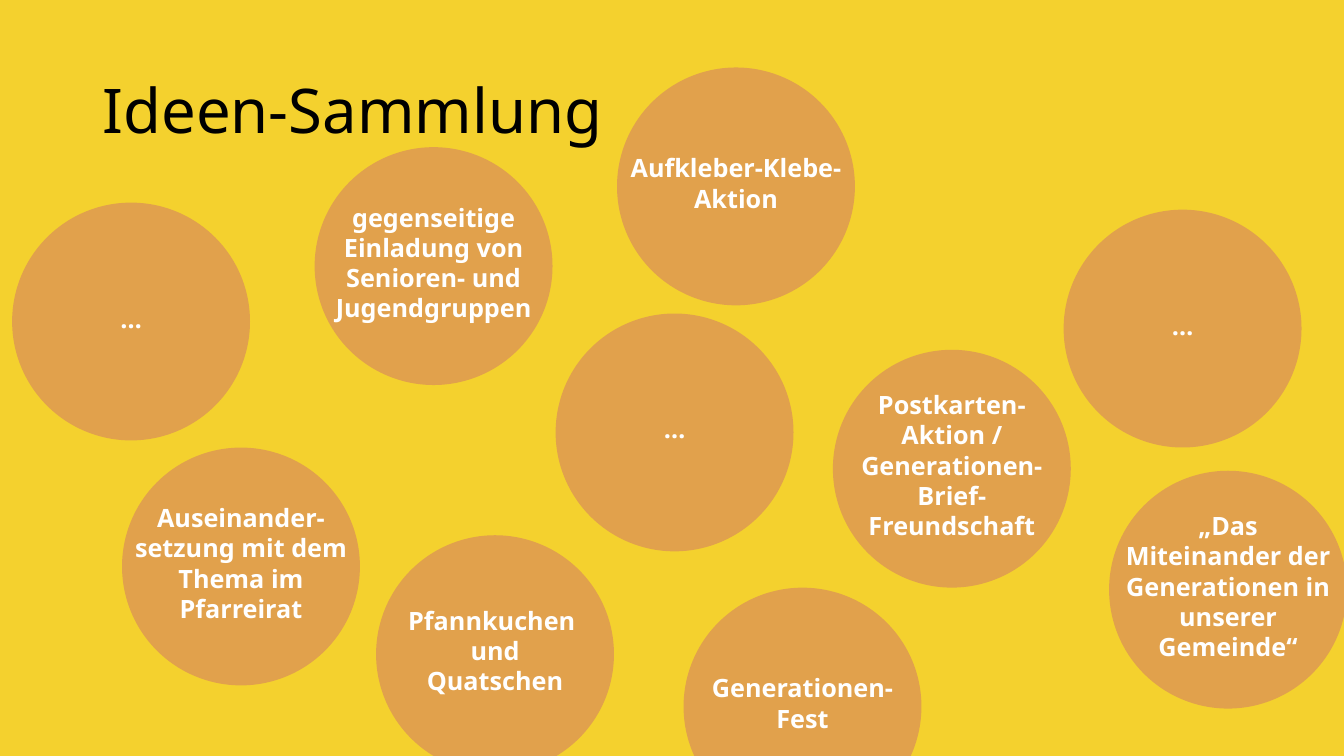
from pptx import Presentation, util as u
from pptx.dml.color import RGBColor
from pptx.enum import shapes, text

YELLOW = RGBColor(0xF4, 0xD1, 0x2E)
OCHRE = RGBColor(0xE1, 0xA1, 0x4C)
BLACK = RGBColor(0, 0, 0)
WHITE = RGBColor(255, 255, 255)

IDEAS = [
    (27.98, 70.8, 3, "Pfannkuchen \nund\nQuatschen"),
    (23.41, 19.47, 4, "gegenseitige Einladung von Senioren- und Jugendgruppen"),
    (9.08, 59.2, 4, "Auseinander-setzung mit dem Thema im Pfarreirat"),
    (50.86, 77.73, 2, "Generationen-Fest"),
    (45.91, 8.93, 2, "Aufkleber-Klebe-Aktion"),
    (61.97, 46.27, 5, "Postkarten-Aktion / Generationen-Brief-Freundschaft"),
    (82.52, 62.27, 5, "„Das Miteinander der Generationen in unserer Gemeinde“"),
    (79.14, 27.73, 1, "…"),
    (41.34, 41.47, 1, "…"),
    (0.9, 26.8, 1, "…"),
]


def write(frame, wording, *, size, color, bold=False, align=None, spacing=None):
    paragraph = frame.paragraphs[0]
    paragraph.text = wording
    paragraph.alignment = align
    paragraph.line_spacing = spacing
    for run in paragraph.runs:
        run.font.name = "Noto Sans"
        run.font.size = u.Pt(size)
        run.font.bold = bold
        run.font.color.rgb = color


class IdeaBoard:
    """Draws a title and idea circles, with lengths in percent of the slide."""

    diameter = 17.7
    first_line, next_line = 5.33, 4.04
    text_lift = 0.47

    def __init__(self, presentation):
        self.width = presentation.slide_width
        self.height = presentation.slide_height
        self.slide = presentation.slides.add_slide(presentation.slide_layouts[6])
        self.slide.background.fill.solid()
        self.slide.background.fill.fore_color.rgb = YELLOW

    def across(self, share):
        return round(self.width * share / 100)

    def down(self, share):
        return round(self.height * share / 100)

    def text_box(self, parent, left, top, width, height, wording, *, grow=False, **style):
        box = parent.add_textbox(left, top, width, height)
        frame = box.text_frame
        frame.word_wrap = True
        frame.vertical_anchor = text.MSO_ANCHOR.MIDDLE
        if grow:
            frame.auto_size = text.MSO_AUTO_SIZE.SHAPE_TO_FIT_TEXT
        write(frame, wording, **style)

    def title(self, wording):
        self.text_box(self.slide.shapes, self.across(6.9), self.down(5.33),
                      self.across(69.7), self.down(19.33), wording,
                      size=44, color=BLACK, spacing=0.9)

    def idea(self, column, row, lines, wording):
        group = self.slide.shapes.add_group_shape()
        left, top, side = self.across(column), self.down(row), self.across(self.diameter)
        circle = group.shapes.add_shape(shapes.MSO_SHAPE.OVAL, left, top, side, side)
        circle.shadow.inherit = False
        circle.fill.solid()
        circle.fill.fore_color.rgb = OCHRE
        circle.line.fill.background()
        height = self.down(self.first_line + self.next_line * (lines - 1))
        text_top = top + (side - height) // 2 - self.down(self.text_lift)
        self.text_box(group.shapes, left, text_top, side, height, wording, grow=True,
                      size=18, color=WHITE, bold=True, align=text.PP_ALIGN.CENTER)


def main():
    presentation = Presentation()
    presentation.slide_width = u.Inches(13.33)
    presentation.slide_height = u.Inches(7.5)
    board = IdeaBoard(presentation)
    board.title("Ideen-Sammlung")
    for idea in IDEAS:
        board.idea(*idea)
    presentation.save("out.pptx")


if __name__ == "__main__":
    main()
